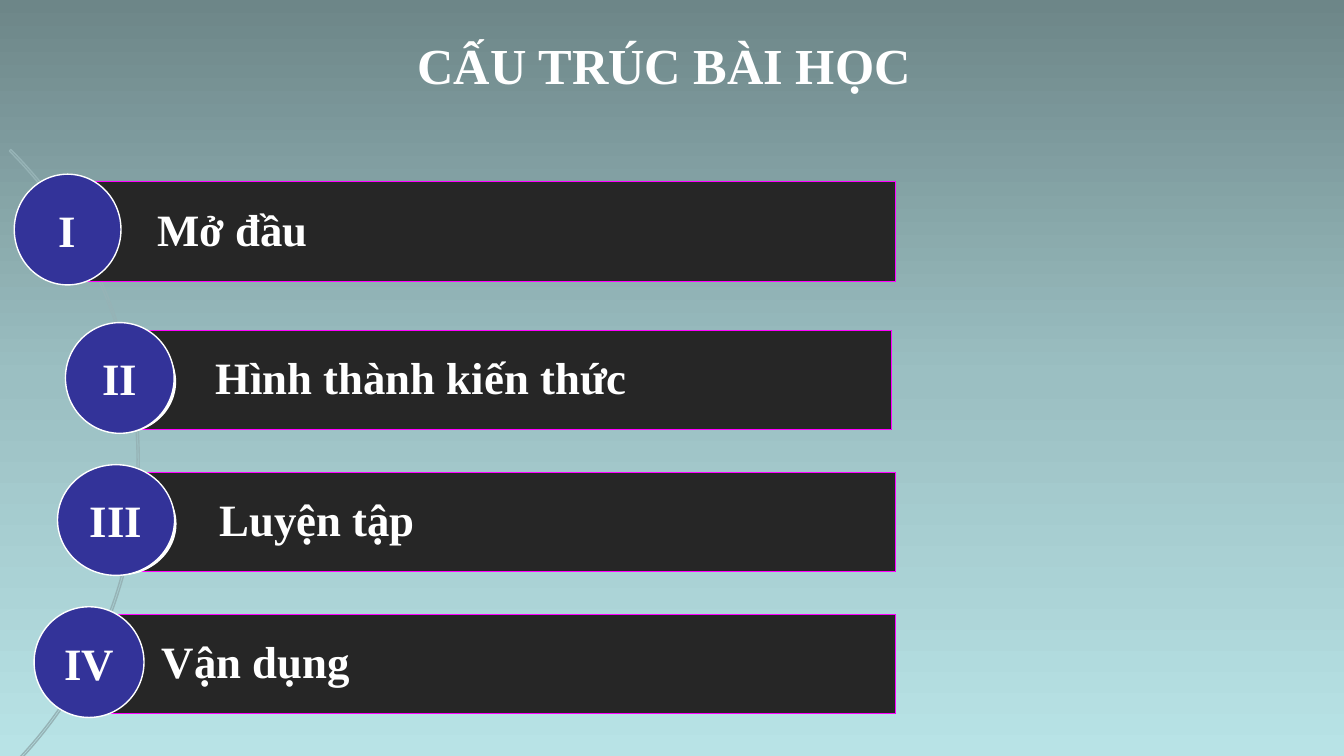
from copy import deepcopy

from pptx import Presentation
from pptx.dml.color import RGBColor
from pptx.enum.shapes import MSO_SHAPE
from pptx.enum.text import MSO_ANCHOR, PP_ALIGN
from pptx.oxml.ns import qn
from pptx.util import Cm, Pt

RECTANGLE = MSO_SHAPE.RECTANGLE
OVAL = MSO_SHAPE.OVAL
BLOCK_ARC = MSO_SHAPE.BLOCK_ARC
MIDDLE = MSO_ANCHOR.MIDDLE
LEFT = PP_ALIGN.LEFT
CENTER = PP_ALIGN.CENTER

FONT = "Times New Roman"
WHITE = "FFFFFF"
BADGE_BLUE = "333399"
BAR_BLACK = "262626"
BAR_EDGE = "FF00FF"
ARC_GREY = "96B3B6"
BACKGROUND_STOPS = [(0, "6D8688"), (0.5, "9BBFC2"), (1, "B8E3E6")]

BAR_HEIGHT = 2.51
BADGE_HEIGHT = 2.79
BAR_DROP = 0.19
BAR_INSET = 2
HALO_SHIFT = 0.05
HALO_HEIGHT = 2.6

# numeral, text, top, badge left, badge width, bar left, bar right, halo width
SECTIONS = [
    ("I", "Mở đầu", 4.39, 0.36, 2.69, 1.96, 22.58, None),
    ("II", "Hình thành kiến thức", 8.13, 1.65, 2.74, 3.43, 22.48, 2.74),
    ("III", "Luyện tập", 11.71, 1.45, 2.95, 3.53, 22.58, 2.82),
    ("IV", "Vận dụng", 15.29, 0.86, 2.77, 2.08, 22.58, None),
]


def color(value):
    return RGBColor.from_string(value)


def add_shape(slide, kind, box, fill=None, line=None, line_width=1):
    shape = slide.shapes.add_shape(kind, *(Cm(length) for length in box))
    shape.shadow.inherit = False
    if fill:
        shape.fill.solid()
        shape.fill.fore_color.rgb = color(fill)
    else:
        shape.fill.background()
    if line:
        shape.line.color.rgb = color(line)
        shape.line.width = Pt(line_width)
    else:
        shape.line.fill.background()
    return shape


def write_text(shape, text, size, alignment):
    paragraph = shape.text_frame.paragraphs[0]
    paragraph.alignment = alignment
    run = paragraph.add_run()
    run.text = text
    run.font.name = FONT
    run.font.size = Pt(size)
    run.font.bold = True
    run.font.color.rgb = color(WHITE)
    return paragraph


def paint_background(slide):
    fill = slide.background.fill
    fill.gradient()
    fill.gradient_angle = 270
    stop_list = next(slide.element.iter(qn("a:gsLst")))
    stop_list.append(deepcopy(stop_list[0]))
    for stop, (position, value) in zip(fill.gradient_stops, BACKGROUND_STOPS):
        stop.position = position
        stop.color.rgb = color(value)


def add_title(slide, box):
    title = slide.shapes.add_textbox(*(Cm(length) for length in box))
    title.text_frame.word_wrap = True
    write_text(title, "CẤU TRÚC BÀI HỌC", 36, CENTER)


def add_arc(slide, box):
    arc = add_shape(slide, BLOCK_ARC, box, line=ARC_GREY)
    for index, value in enumerate((189, 27, 0.0025)):
        arc.adjustments[index] = value


def add_bar(slide, box, text):
    bar = add_shape(slide, RECTANGLE, box, BAR_BLACK, BAR_EDGE, 0.75)
    frame = bar.text_frame
    frame.word_wrap = True
    frame.vertical_anchor = MIDDLE
    frame.margin_left = Cm(BAR_INSET)
    write_text(bar, text, 32, LEFT).line_spacing = 0.9


def add_badge(slide, box, numeral):
    badge = add_shape(slide, OVAL, box, BADGE_BLUE, WHITE)
    badge.text_frame.word_wrap = False
    badge.text_frame.vertical_anchor = MIDDLE
    write_text(badge, numeral, 32, CENTER)


def add_section(slide, numeral, text, top, left, width, bar_left, bar_right, halo_width):
    bar_top = top + BAR_DROP
    add_bar(slide, (bar_left, bar_top, bar_right - bar_left, BAR_HEIGHT), text)
    if halo_width:
        halo_left = left + width + HALO_SHIFT - halo_width
        add_shape(slide, OVAL, (halo_left, bar_top, halo_width, HALO_HEIGHT), WHITE)
    add_badge(slide, (left, top, width, BADGE_HEIGHT), numeral)


def main():
    presentation = Presentation()
    presentation.slide_width = Cm(33.87)
    presentation.slide_height = Cm(19.05)
    slide = presentation.slides.add_slide(presentation.slide_layouts[6])
    paint_background(slide)
    add_title(slide, (3.94, 0.74, 25.6, 1.8))
    add_arc(slide, (-18.59, 0.53, 22.1, 22.1))
    for section in SECTIONS:
        add_section(slide, *section)
    presentation.save("out.pptx")


if __name__ == "__main__":
    main()
